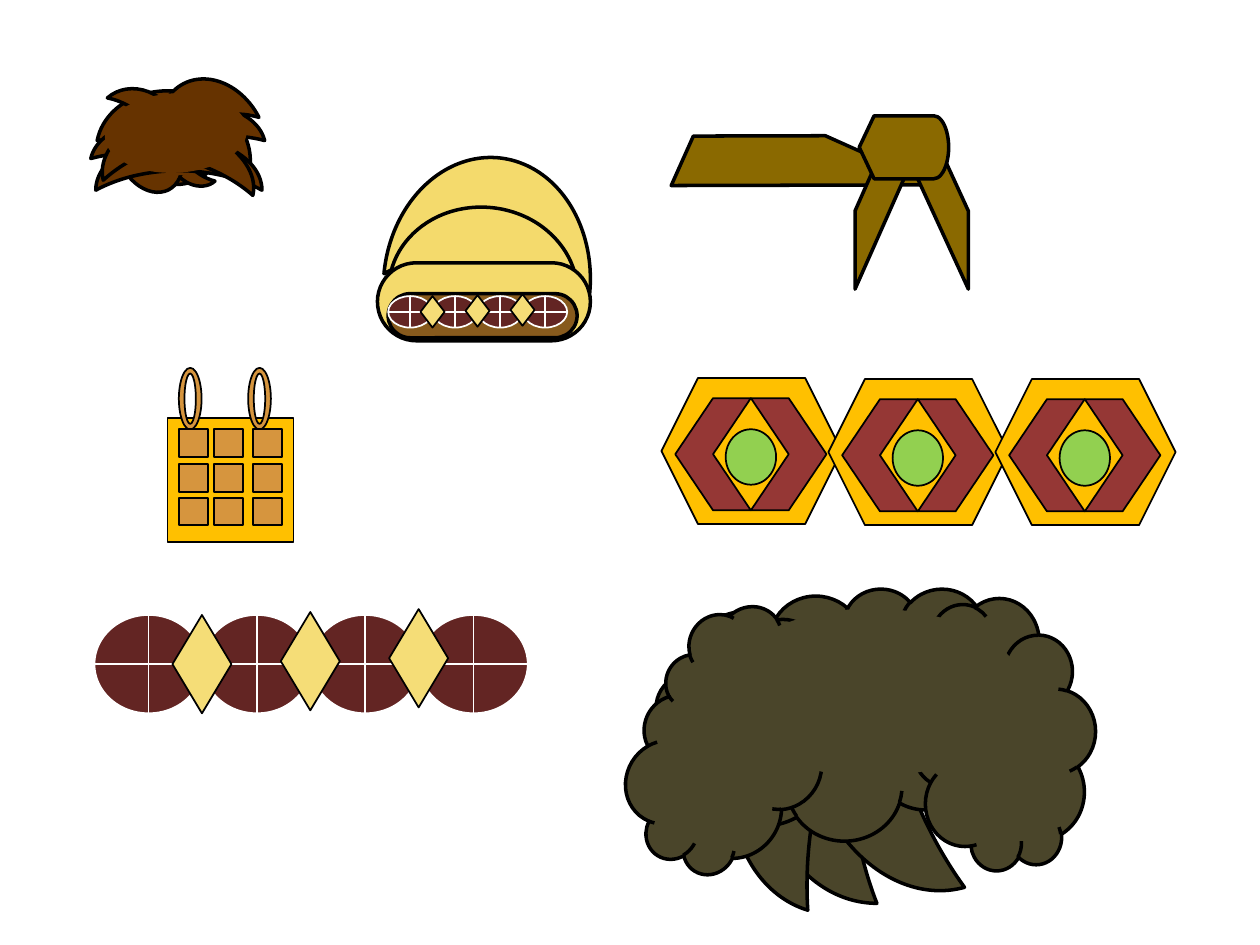
from pptx import Presentation
from pptx.dml.color import RGBColor
from pptx.enum.shapes import MSO_SHAPE as S
from pptx.util import Pt

GOLD, MAROON, TAN = "FFC000", "632523", "D6953E"
STRAW, PALE, OLIVE = "F4DA6C", "F5DD77", "8A6900"
UMBER, BROWN = "4A452A", "663300"

# Each part: preset, (left, top, width, height), format values
CAP = [
    (S.MOON, (245.5, 67, 72, 118.1), {"rotation": 95.3, "adj": 0.74}),
    (S.MOON, (254.2, 88.6, 48.2, 108), {"rotation": 95.3, "adj": 0.74}),
    (S.ROUNDED_RECTANGLE, (254.2, 111.6, 44.6, 121.7), {"rotation": 90, "adj": 0.5}),
    (S.ROUNDED_RECTANGLE, (221.8, 167.8, 108, 25.2),
     {"flip": "flipV", "adj": 0.5, "fill": "875A1D"}),
]
SASH = [
    (S.DIAGONAL_STRIPE, (390.2, 74.9, 137.5, 61.9), {"rotation": 24.1}),
    (S.DIAGONAL_STRIPE, (463.7, 100.8, 89.3, 39.6), {"rotation": 270, "flip": "flipH"}),
    (S.DIAGONAL_STRIPE, (488.2, 100.1, 89.3, 41), {"rotation": 90}),
    (S.FLOWCHART_DISPLAY, (491, 66.2, 51.1, 36), {}),
]
CURLY_HAIR = [
    (S.MOON, (434.9, 354.2, 66.2, 162), {"adj": 0.774}),
    (S.MOON, (463, 347.8, 66.2, 171.4), {"rotation": 344.3, "adj": 0.774}),
    (S.MOON, (421.2, 348.5, 66.2, 165.6), {"rotation": 17.1, "adj": 0.774}),
    (S.CLOUD, (375.1, 336.2, 210.2, 144), {}),
    (S.CLOUD, (341.3, 370.8, 155.5, 106.6), {"rotation": 301.5}),
    (S.CLOUD, (494.6, 366.5, 155.5, 106.6), {"rotation": 270}),
    (S.OVAL, (411.1, 347.8, 174.2, 95.8), {"line": None}),
]
SPIKY_HAIR = [
    (S.MOON, (85, 66.2, 24.5, 53.3), {"rotation": 281.2, "adj": 0.797}),
    (S.MOON, (87.1, 49.7, 20.2, 56.9), {"rotation": 270, "adj": 0.631}),
    (S.MOON, (87.8, 54, 20.2, 56.9), {"rotation": 282.8, "adj": 0.631}),
    (S.MOON, (87.8, 60.5, 20.2, 56.9), {"rotation": 256.2, "adj": 0.631}),
    (S.MOON, (99.4, 77.8, 13.7, 34.6), {"rotation": 318.4, "adj": 0.631}),
    (S.MOON, (78.5, 79.9, 24.5, 35.3), {"rotation": 243, "adj": 0.668}),
    (S.OVAL, (91.4, 68.4, 25.9, 37.4), {"rotation": 86.8, "line": None}),
    (S.MOON, (84.2, 26.6, 36.7, 88.6), {"rotation": 101.2, "adj": 0.797}),
    (S.MOON, (87.1, 46.1, 30.2, 95), {"rotation": 90, "adj": 0.631}),
    (S.MOON, (86.4, 38.9, 30.2, 95), {"rotation": 102.8, "adj": 0.631}),
    (S.MOON, (86.4, 29.5, 30.2, 95), {"rotation": 76.2, "adj": 0.631}),
    (S.MOON, (75.6, 41.8, 23, 51.8), {"rotation": 138.4, "adj": 0.631}),
    (S.MOON, (95, 34.6, 36.7, 59), {"rotation": 63, "adj": 0.668}),
    (S.OVAL, (77.8, 35.3, 45.4, 81.4), {"rotation": 266.8, "line": None}),
]
# Offsets from the corner of one belt plate
BELT_PLATE = [
    (S.HEXAGON, (0, 0, 103, 83.5), {"fill": GOLD}),
    (S.CHEVRON, (51.1, 11.5, 43.2, 64.1), {"fill": "953735"}),
    (S.CHEVRON, (7.9, 11.5, 43.2, 64.1), {"fill": "953735", "flip": "flipH"}),
    (S.OVAL, (36.7, 29.3, 28.8, 31.7), {"fill": "92D050"}),
]
PLATE_TOPS = [216, 216.6, 216.6]
BAG = (95.8, 239, 72, 70.6)
HANDLE_LEFTS = [102.2, 141.8]
PATCH_LEFTS = [102.3, 122.3, 144.4]
PATCH_TOPS = [245.2, 265.2, 284.4]


def color(value):
    return RGBColor.from_string(value)


def draw(group, preset, box, fill, weight=1, line="000000", rotation=0, adj=None, flip=None):
    part = group.shapes.add_shape(preset, *(Pt(length) for length in box))
    part.shadow.inherit = False
    part.rotation = rotation
    part.fill.solid()
    part.fill.fore_color.rgb = color(fill)
    if line:
        part.line.color.rgb = color(line)
        part.line.width = Pt(weight)
    else:
        part.line.fill.background()
    if adj is not None:
        part.adjustments[0] = adj
    if flip:
        part.element.spPr.xfrm.set(flip, "1")


def draw_parts(group, parts, left=0, top=0, **shared):
    for preset, (x, y, width, height), values in parts:
        draw(group, preset, (left + x, top + y, width, height), **{**shared, **values})


def draw_studs(group, left, top, step, width, height):
    """Four crossed discs with three diamonds over the joins, each a little higher."""
    for i in range(4):
        draw(group, S.FLOWCHART_OR, (left + i * step, top, width, height), MAROON, line="FFFFFF")
    for i in range(3):
        box = (left + (i + 0.72) * step, top - i * 0.03 * height, 0.545 * width, height)
        draw(group, S.DIAMOND, box, PALE)


def main():
    prs = Presentation()
    prs.slide_width, prs.slide_height = Pt(720), Pt(540)
    slide = prs.slides.add_slide(prs.slide_layouts[6])
    new_group = slide.shapes.add_group_shape

    cap = new_group()
    draw_parts(cap, CAP, fill=STRAW, weight=2)
    draw_studs(cap, 221.8, 169.2, 25.7, 25.2, 18)

    draw_parts(new_group(), SASH, fill=OLIVE, weight=2)
    draw_studs(new_group(), 54, 351.4, 61.9, 61.9, 56.2)

    bag = new_group()
    draw(bag, S.RECTANGLE, BAG, GOLD)
    for left in HANDLE_LEFTS:
        draw(bag, S.DONUT, (left, 210.2, 13, 35.3), TAN)
    for top in PATCH_TOPS:
        for left in PATCH_LEFTS:
            draw(bag, S.RECTANGLE, (left, top, 16.6, 15.8), TAN)

    draw_parts(new_group(), CURLY_HAIR, fill=UMBER, weight=2)

    belt = new_group()
    for i, top in enumerate(PLATE_TOPS):
        draw_parts(belt, BELT_PLATE, 378 + i * 95.4, top)

    draw_parts(new_group(), SPIKY_HAIR, fill=BROWN, weight=2)
    prs.save("out.pptx")


if __name__ == "__main__":
    main()
